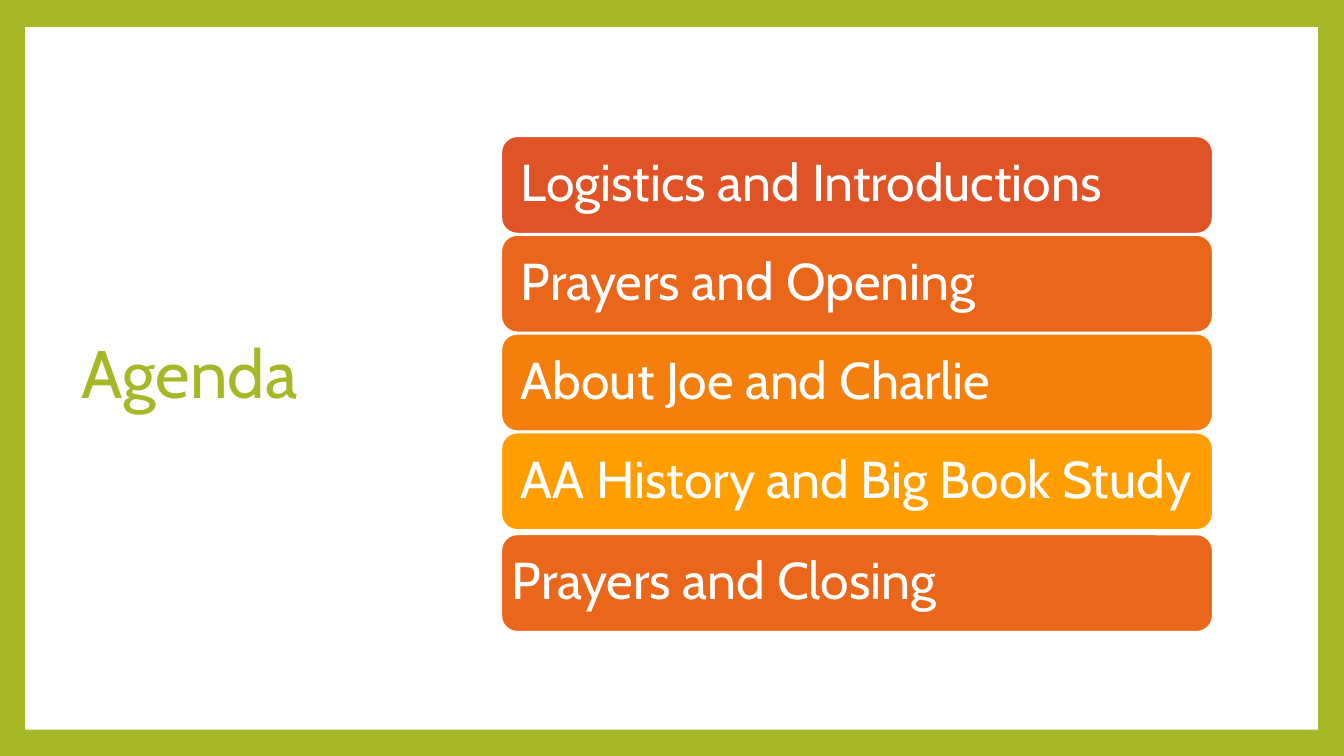
from pptx import Presentation
from pptx.dml.color import RGBColor
from pptx.enum.shapes import MSO_SHAPE
from pptx.enum.text import MSO_ANCHOR
from pptx.util import Inches, Pt

COLORS = {
    "green": "A6B727",
    "white": "FFFFFF",
    "red": "DF5327",
    "rust": "E9661A",
    "orange": "F47F0D",
    "amber": "FE9E00",
}


def write(holder, text, size, color, left=0.1, right=0.1):
    frame = holder.text_frame
    frame.word_wrap = True
    frame.vertical_anchor = MSO_ANCHOR.MIDDLE
    frame.margin_left, frame.margin_right = Inches(left), Inches(right)
    paragraph = frame.paragraphs[0]
    paragraph.alignment = 1
    paragraph.line_spacing = 0.9
    run = paragraph.add_run()
    run.text = text
    run.font.name = "Cabin"
    run.font.size = Pt(size)
    run.font.color.rgb = RGBColor.from_string(COLORS[color])


prs = Presentation()
prs.slide_width, prs.slide_height = Inches(13.33), Inches(7.5)
slide = prs.slides.add_slide(prs.slide_layouts[6])
slide.background.fill.solid()
slide.background.fill.fore_color.rgb = RGBColor.from_string(COLORS["green"])

page = slide.shapes.add_shape(
    MSO_SHAPE.RECTANGLE, Inches(0.25), Inches(0.27), Inches(12.82), Inches(6.97))
page.shadow.inherit = False
page.fill.solid()
page.fill.fore_color.rgb = RGBColor.from_string(COLORS["white"])
page.line.fill.background()

title = slide.shapes.add_textbox(Inches(0.71), Inches(0.67), Inches(3.68), Inches(6.13))
write(title, "Agenda", 48, "green")

agenda = [
    ("Logistics and Introductions", "red", 1.35, 0.15),
    ("Prayers and Opening", "rust", 2.33, 0.15),
    ("About Joe and Charlie", "orange", 3.31, 0.15),
    ("AA History and Big Book Study", "amber", 4.29, 0.15),
    ("Prayers and Closing", "rust", 5.3, 0.06),
]
for topic, color, top, indent in agenda:
    bar = slide.shapes.add_shape(
        MSO_SHAPE.ROUNDED_RECTANGLE, Inches(4.97), Inches(top), Inches(7.06), Inches(0.97))
    bar.shadow.inherit = False
    bar.fill.solid()
    bar.fill.fore_color.rgb = RGBColor.from_string(COLORS[color])
    bar.line.color.rgb = RGBColor.from_string(COLORS["white"])
    bar.line.width = Pt(1.5)
    write(bar, topic, 37, "white", left=indent, right=0.05)

prs.save("out.pptx")
